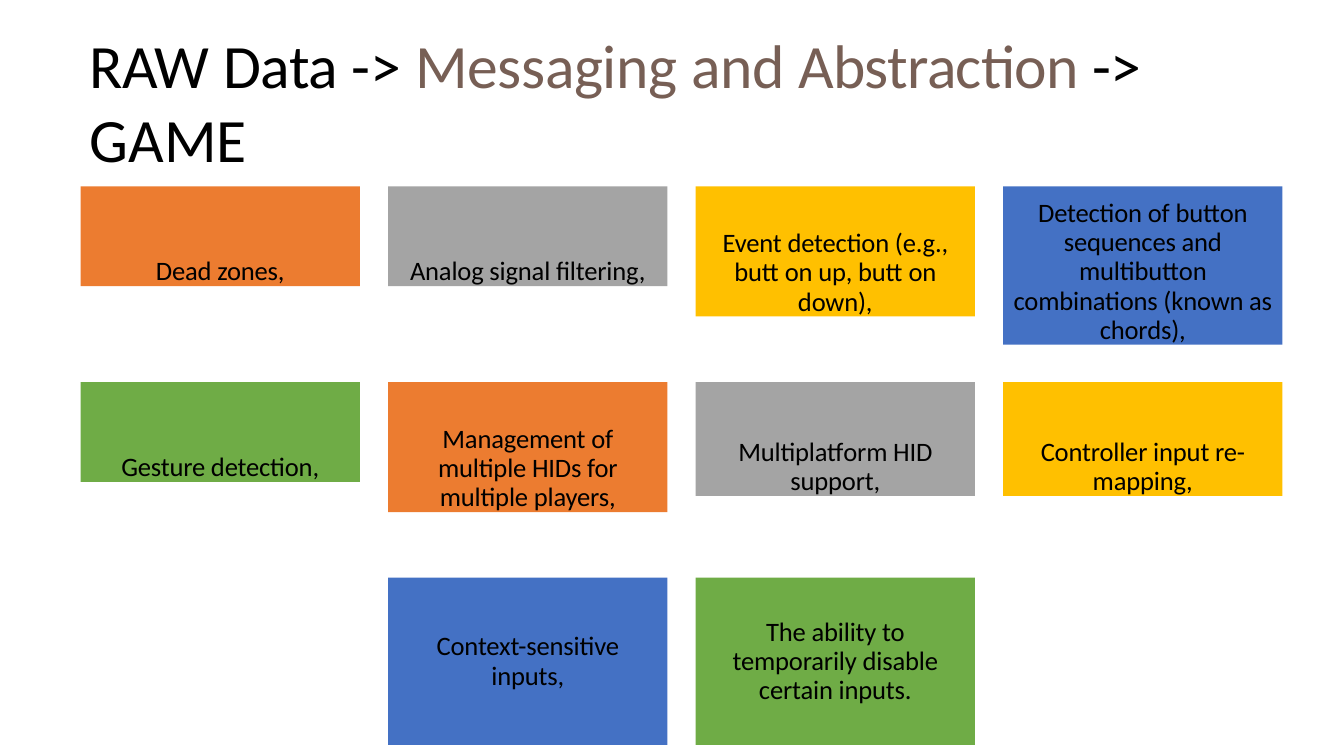
from pptx import Presentation
from pptx.dml.color import RGBColor
from pptx.enum.shapes import MSO_SHAPE
from pptx.enum.text import MSO_ANCHOR, PP_ALIGN
from pptx.util import Inches, Pt

COLORS = {
    "black": "000000", "brown": "775F55", "orange": "EC7C30", "gray": "A4A4A4",
    "gold": "FFC000", "blue": "4471C4", "green": "6FAC46",
}

# Text, spacing in hundredths of a point, colour
TITLE = [
    ("RAW ", -50, "black"), ("Data ", -30, "black"), ("-> ", 0, "black"),
    ("Messaging ", -30, "brown"), ("and ", -20, "brown"),
    ("Abstraction ", -50, "brown"), ("-> ", 0, "black"), ("GAME", -10, "black"),
]

# Column, row, height, side inset, fill, text
TILES = [
    (0, 0, 0.99, 0.3, "orange", "Dead zones,"),
    (1, 0, 0.99, 0.1, "gray", "Analog signal filtering,"),
    (2, 0, 1.29, 0.2, "gold", "Event detection (e.g., butt on up, butt on down),"),
    (3, 0, 1.57, 0.06, "blue", "Detection of button sequences and multibutton "
                               "combinations (known as chords),"),
    (0, 1, 0.99, 0.3, "green", "Gesture detection,"),
    (1, 1, 1.29, 0.3, "orange", "Management of multiple HIDs for multiple players,"),
    (2, 1, 1.13, 0.3, "gray", "Multiplatform HID support,"),
    (3, 1, 1.13, 0.3, "gold", "Controller input re-mapping,"),
    (1, 2, 1.66, 0.3, "blue", "Context-sensitive inputs,"),
    (2, 2, 1.66, 0.3, "green", "The ability to temporarily disable certain inputs."),
]
WIDTH, STEP_X, STEP_Y = 2.77, 3.05, 1.94


def paint(color):
    return RGBColor.from_string(COLORS[color])


def set_frame(shape, side, anchor):
    frame = shape.text_frame
    frame.word_wrap = True
    frame.margin_left = frame.margin_right = Inches(side)
    frame.margin_top = frame.margin_bottom = 0
    frame.vertical_anchor = anchor
    return frame.paragraphs[0]


def add_text(para, text, size, color, gap):
    run = para.add_run()
    run.text = text
    run.font.name = "Calibri"
    run.font.size = Pt(size)
    run.font.color.rgb = paint(color)
    run.font._element.set("spc", str(gap))


def add_title(slide, left, top, width, height):
    box = slide.shapes.add_textbox(
        Inches(left), Inches(top), Inches(width), Inches(height))
    para = set_frame(box, 0, MSO_ANCHOR.MIDDLE)
    para.alignment = PP_ALIGN.LEFT
    for text, gap, color in TITLE:
        add_text(para, text, 44, color, gap)


def add_tile(slide, left, top, height, side, fill, text, anchor):
    tile = slide.shapes.add_shape(
        MSO_SHAPE.RECTANGLE, Inches(left), Inches(top), Inches(WIDTH), Inches(height))
    tile.shadow.inherit = False
    tile.fill.solid()
    tile.fill.fore_color.rgb = paint(fill)
    tile.line.fill.background()
    para = set_frame(tile, side, anchor)
    para.alignment = PP_ALIGN.CENTER
    para.line_spacing = Pt(20.9)
    add_text(para, text, 19, "black", -10)


def add_grid(slide, left, top):
    for col, row, height, side, fill, text in TILES:
        # The last row centres its text, the others set it at the foot
        anchor = MSO_ANCHOR.MIDDLE if row == 2 else MSO_ANCHOR.BOTTOM
        add_tile(slide, left + col * STEP_X, top + row * STEP_Y,
                 height, side, fill, text, anchor)


def main():
    deck = Presentation()
    deck.slide_width, deck.slide_height = Inches(13.33), Inches(7.5)
    slide = deck.slides.add_slide(deck.slide_layouts[6])
    add_title(slide, 0.89, 0.25, 11.89, 1.5)
    add_grid(slide, 0.8, 1.85)
    deck.save("out.pptx")


if __name__ == "__main__":
    main()
